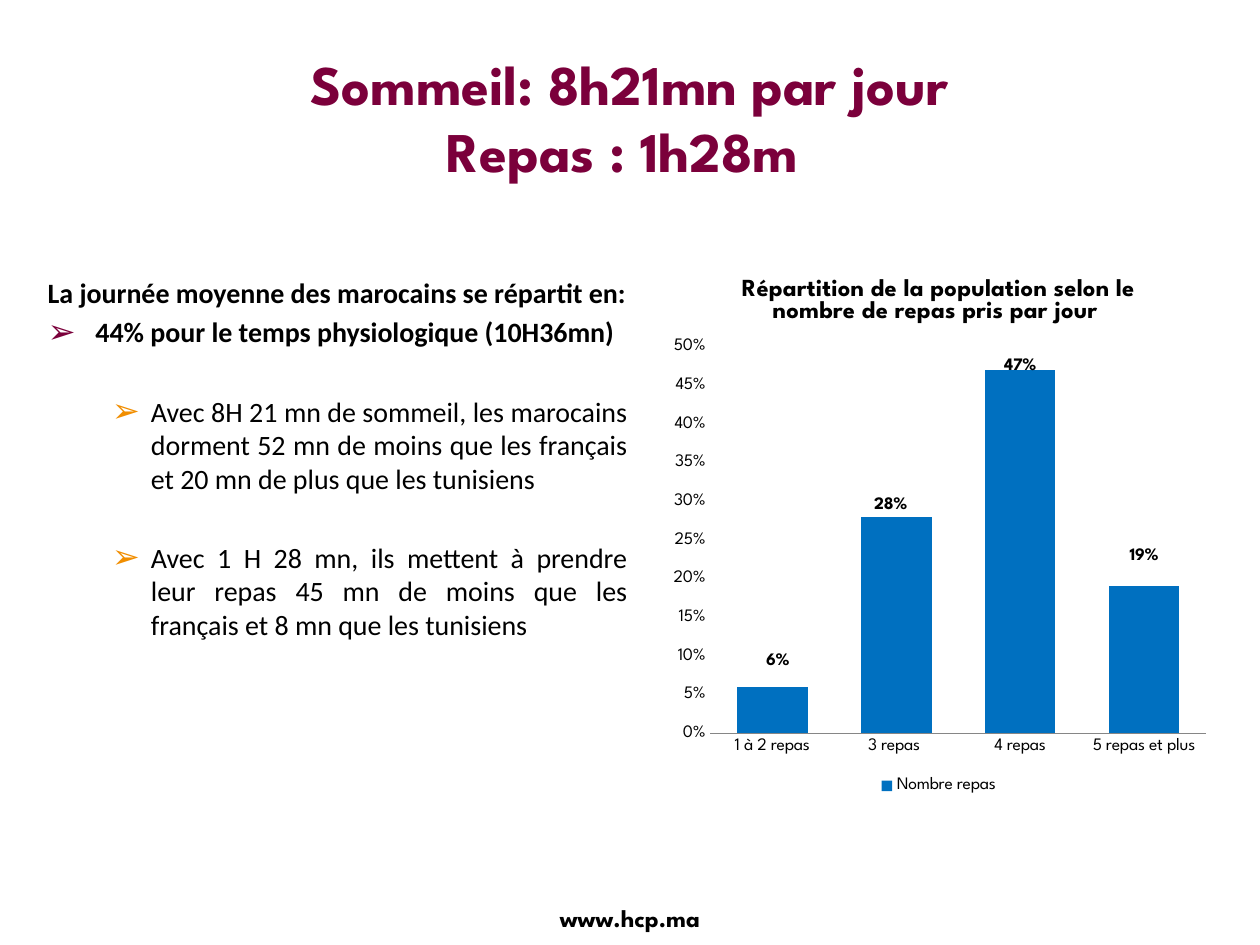
from dataclasses import dataclass

from lxml import etree
from pptx import Presentation
from pptx.chart.data import CategoryChartData
from pptx.dml.color import RGBColor
from pptx.enum.chart import XL_CHART_TYPE, XL_LEGEND_POSITION, XL_TICK_MARK
from pptx.enum.text import MSO_ANCHOR, PP_ALIGN
from pptx.oxml.ns import qn
from pptx.util import Inches, Pt

STACKED = XL_CHART_TYPE.COLUMN_STACKED
LEGEND_BOTTOM = XL_LEGEND_POSITION.BOTTOM
NO_TICK = XL_TICK_MARK.NONE
MIDDLE = MSO_ANCHOR.MIDDLE
LEFT, CENTER, JUSTIFY = PP_ALIGN.LEFT, PP_ALIGN.CENTER, PP_ALIGN.JUSTIFY

WIDTH, HEIGHT = 10, 7.5
COLUMNS, ROWS = 100, 75
TITLE_ONLY = 5
LABEL_EXTENSION = "{CE6537A1-D6FC-4f65-9D91-7224C49458BB}"
CHART_2012 = "http://schemas.microsoft.com/office/drawing/2012/chart"


@dataclass(frozen=True)
class Theme:
    heading_font: str = "League Spartan"
    body_font: str = "Calibri"
    plum: str = "7B003B"
    orange: str = "F18E00"
    blue: str = "0070C0"
    grey: str = "868686"
    black: str = "000000"
    title_size: int = 32
    body_size: int = 16
    caption_size: int = 14
    chart_size: int = 10


THEME = Theme()

TITLE_BOX = (5, 3, 90, 12.5)
BODY_BOX = (2.8, 21.4, 48, 43.6)
CHART_BOX = (52.4, 20.2, 44.2, 43.2)
FOOTER_BOX = (38.2, 71.2, 23.6, 3.3)

BODY = [
    ("La journée moyenne des marocains se répartit en:", dict(bold=True)),
    ("44% pour le temps physiologique (10H36mn)",
     dict(bold=True, bullet=THEME.plum, before=3.2)),
]
BODY += [
    (text, dict(bullet=THEME.orange, align=JUSTIFY, level=1, before=26,
                margin=0.82, hanging=0.31))
    for text in (
        "Avec 8H 21 mn de sommeil, les marocains dorment 52 mn de moins "
        "que les français et 20 mn de plus que les tunisiens",
        "Avec 1 H 28 mn, ils mettent à prendre leur repas 45 mn de moins "
        "que les français et 8 mn que les tunisiens ",
    )
]

MEALS = {"1 à 2 repas": 0.06, "3 repas ": 0.28, "4 repas": 0.47, "5 repas et plus": 0.19}
LABEL_OFFSETS = [(0.01, -0.09), (-0.01, -0.22), (0, -0.34), (0, -0.19)]


def place(box):
    left, top, width, height = box
    column, row = WIDTH / COLUMNS, HEIGHT / ROWS
    return (Inches(left * column), Inches(top * row),
            Inches(width * column), Inches(height * row))


def format_font(font, name, size, color=THEME.black, bold=False):
    font.name = name
    font.size = Pt(size)
    font.bold = bold
    font.color.rgb = RGBColor.from_string(color)


def add_bullet(paragraph, color):
    properties = paragraph._p.get_or_add_pPr()
    bullet_color = etree.SubElement(properties, qn("a:buClr"))
    etree.SubElement(bullet_color, qn("a:srgbClr"), val=color)
    etree.SubElement(properties, qn("a:buSzPct"), val="120000")
    etree.SubElement(properties, qn("a:buFont"), typeface=THEME.body_font)
    etree.SubElement(properties, qn("a:buChar"), char="➢")


def write(paragraph, text, name=THEME.body_font, size=THEME.body_size,
          color=THEME.black, bold=False, align=LEFT, before=0, level=0,
          bullet=None, margin=0.0, hanging=0.0):
    paragraph.text = text
    paragraph.alignment = align
    paragraph.level = level
    paragraph.space_before = Pt(before)
    properties = paragraph._p.get_or_add_pPr()
    properties.set("marL", str(Inches(margin)))
    properties.set("indent", str(-Inches(hanging)))
    if bullet:
        add_bullet(paragraph, bullet)
    format_font(paragraph.font, name, size, color, bold)


def add_title(slide, box):
    title = slide.shapes.title
    title.left, title.top, title.width, title.height = place(box)
    title.text_frame.vertical_anchor = MIDDLE
    write(title.text_frame.paragraphs[0], "Sommeil: 8h21mn par jour\vRepas : 1h28m ",
          name=THEME.heading_font, size=THEME.title_size, color=THEME.plum,
          bold=True, align=CENTER)


def add_body(slide, box):
    frame = slide.shapes.add_textbox(*place(box)).text_frame
    frame.word_wrap = True
    for index, (text, options) in enumerate(BODY):
        paragraph = frame.add_paragraph() if index else frame.paragraphs[0]
        write(paragraph, text, **{"margin": 0.38, "hanging": 0.38, **options})


def add_footer(slide, box):
    frame = slide.shapes.add_textbox(*place(box)).text_frame
    frame.word_wrap = True
    write(frame.paragraphs[0], "www.hcp.ma", name=THEME.heading_font,
          size=THEME.caption_size, bold=True, align=CENTER)


def manual_layout(**values):
    layout = etree.Element(qn("c:layout"))
    manual = etree.SubElement(layout, qn("c:manualLayout"))
    for name, value in values.items():
        etree.SubElement(manual, qn(f"c:{name}"), val=str(value))
    return layout


def set_plot_area(chart):
    area = chart._chartSpace.find(".//" + qn("c:plotArea"))
    for layout in area.findall(qn("c:layout")):
        area.remove(layout)
    area.insert(0, manual_layout(layoutTarget="inner", xMode="edge", yMode="edge",
                                 x=0.09, y=0.17, w=0.89, h=0.71))


def hide_leader_lines(labels):
    element = labels._element
    etree.SubElement(element, qn("c:showLeaderLines"), val="0")
    extensions = etree.SubElement(element, qn("c:extLst"))
    extension = etree.SubElement(extensions, qn("c:ext"), uri=LABEL_EXTENSION)
    etree.SubElement(extension, f"{{{CHART_2012}}}showLeaderLines",
                     nsmap={"c15": CHART_2012}, val="0")


def format_axes(chart):
    for axis in (chart.category_axis, chart.value_axis):
        axis.major_tick_mark = axis.minor_tick_mark = NO_TICK
        axis.has_major_gridlines = False
    chart.category_axis.format.line.color.rgb = RGBColor.from_string(THEME.grey)
    values = chart.value_axis
    values.minimum_scale, values.maximum_scale, values.major_unit = 0, 0.5, 0.05
    values.format.line.fill.background()
    values.tick_labels.number_format = "0%"
    values.tick_labels.number_format_is_linked = False


def format_series(series):
    series.format.fill.solid()
    series.format.fill.fore_color.rgb = RGBColor.from_string(THEME.blue)
    labels = series.data_labels
    labels.show_value = True
    labels.number_format = "0%"
    labels.number_format_is_linked = False
    format_font(labels.font, THEME.heading_font, THEME.chart_size, bold=True)
    for index, (across, down) in enumerate(LABEL_OFFSETS):
        format_font(series.points[index].data_label.font, THEME.heading_font,
                    THEME.chart_size, bold=True)
        label = labels._element.findall(qn("c:dLbl"))[index]
        label.insert(1, manual_layout(x=across, y=down))
    for leader in labels._element.findall(qn("c:showLeaderLines")):
        labels._element.remove(leader)
    hide_leader_lines(labels)


def add_meal_chart(slide, box):
    data = CategoryChartData(number_format="0%")
    data.categories = list(MEALS)
    data.add_series("Nombre repas", list(MEALS.values()))
    chart = slide.shapes.add_chart(STACKED, *place(box), data).chart
    format_font(chart.font, THEME.heading_font, THEME.chart_size)
    chart.has_title = True
    write(chart.chart_title.text_frame.paragraphs[0],
          "Répartition de la population selon le nombre de repas pris par jour ",
          name=THEME.heading_font, size=THEME.caption_size, bold=True, align=CENTER)
    chart.has_legend = True
    chart.legend.position = LEGEND_BOTTOM
    chart.legend.include_in_layout = False
    plot = chart.plots[0]
    plot.gap_width, plot.overlap, plot.vary_by_categories = 75, 100, False
    set_plot_area(chart)
    format_axes(chart)
    format_series(plot.series[0])


def main():
    presentation = Presentation()
    presentation.slide_width, presentation.slide_height = Inches(WIDTH), Inches(HEIGHT)
    slide = presentation.slides.add_slide(presentation.slide_layouts[TITLE_ONLY])
    add_footer(slide, FOOTER_BOX)
    add_title(slide, TITLE_BOX)
    add_body(slide, BODY_BOX)
    add_meal_chart(slide, CHART_BOX)
    presentation.save("out.pptx")


if __name__ == "__main__":
    main()
